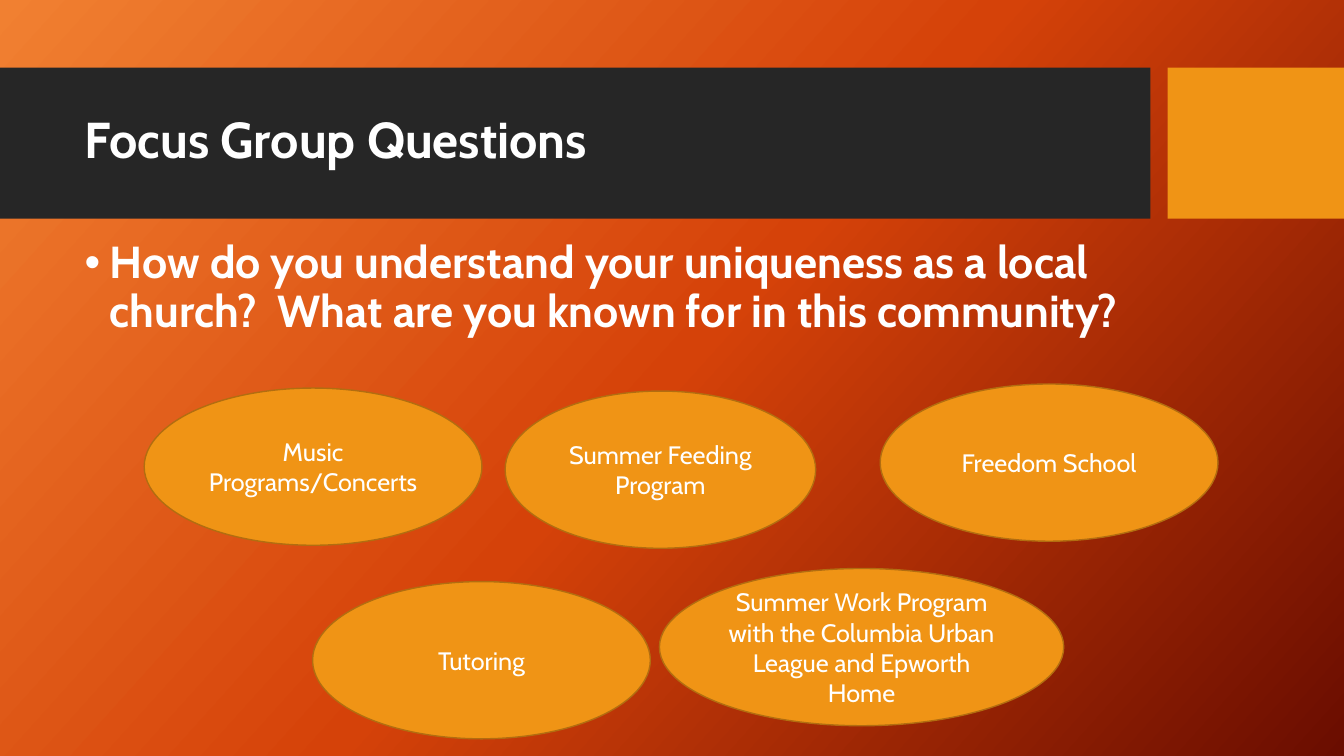
from copy import deepcopy
from dataclasses import dataclass

from lxml import etree
from pptx import Presentation
from pptx.dml.color import RGBColor
from pptx.enum import shapes, text
from pptx.oxml import ns
from pptx.util import Inches, Pt

# Content
TITLE = "Focus Group Questions"
QUESTION = ("How do you understand your uniqueness as a local church?  "
            "What are you known for in this community?")
# answer, left, top, width
ANSWERS = [
    ("Music Programs/Concerts", 1.43, 3.85, 3.35),
    ("Summer Feeding Program", 5.01, 3.88, 3.08),
    ("Freedom School", 8.73, 3.81, 3.35),
    ("Tutoring", 3.1, 5.77, 3.35),
    ("Summer Work Program with the Columbia Urban League and Epworth Home",
     6.54, 5.64, 4.01),
]
ANSWER_HEIGHT = 1.56


@dataclass(frozen=True)
class Theme:
    font: str = "Cabin"
    ink: str = "FFFFFF"
    band: str = "262626"
    accent: str = "F09415"
    outline: str = "B26D10"
    gradient: tuple = ((0, "F18031"), (0.5, "D54209"), (1, "6A0D00"))
    gradient_angle: int = 42
    title_size: int = 36
    question_size: int = 32
    answer_size: int = 18


THEME = Theme()
SLIDE_WIDTH, SLIDE_HEIGHT = 13.33, 7.5
BAND_TOP, BAND_HEIGHT, BAND_WIDTH = 0.67, 1.5, 11.41
ACCENT_LEFT = 11.58


def paint_background(page):
    fill = page.background.fill
    fill.gradient()
    fill.gradient_angle = 360 - THEME.gradient_angle
    stop_list = page.element.find(".//" + ns.qn("a:gsLst"))
    stop_list.insert(1, deepcopy(stop_list[0]))
    for stop, (position, color) in zip(fill.gradient_stops, THEME.gradient):
        stop.position = position
        stop.color.rgb = RGBColor.from_string(color)


def add_block(page, kind, left, top, width, height, fill, line=None):
    block = page.shapes.add_shape(
        kind, Inches(left), Inches(top), Inches(width), Inches(height))
    block.shadow.inherit = False
    block.fill.solid()
    block.fill.fore_color.rgb = RGBColor.from_string(fill)
    if line:
        block.line.color.rgb = RGBColor.from_string(line)
        block.line.width = Pt(1)
    else:
        block.line.fill.background()
    return block


def place(box, left, top, width, height):
    box.left, box.top = Inches(left), Inches(top)
    box.width, box.height = Inches(width), Inches(height)


def write(box, words, size, align, anchor, bold=False):
    frame = box.text_frame
    frame.word_wrap = True
    frame.auto_size = text.MSO_AUTO_SIZE.NONE
    frame.vertical_anchor = anchor
    para = frame.paragraphs[0]
    para.alignment = align
    para.space_before = Pt(0)
    span = para.add_run()
    span.text = words
    span.font.name = THEME.font
    span.font.size = Pt(size)
    span.font.bold = bold
    span.font.color.rgb = RGBColor.from_string(THEME.ink)
    return para


def add_bullet(para, indent):
    props = para._p.get_or_add_pPr()
    props.set("marL", str(Inches(indent)))
    props.set("indent", str(-Inches(indent)))
    etree.SubElement(props, ns.qn("a:buFont")).set("typeface", "Arial")
    etree.SubElement(props, ns.qn("a:buChar")).set("char", "•")


def main():
    deck = Presentation()
    deck.slide_width, deck.slide_height = Inches(SLIDE_WIDTH), Inches(SLIDE_HEIGHT)
    page = deck.slides.add_slide(deck.slide_layouts[1])
    title, question = page.shapes.title, page.placeholders[1]
    paint_background(page)

    # Title band and accent block, kept behind the placeholders
    rectangle = shapes.MSO_SHAPE.RECTANGLE
    band = add_block(page, rectangle, 0, BAND_TOP, BAND_WIDTH, BAND_HEIGHT, THEME.band)
    accent = add_block(page, rectangle, ACCENT_LEFT, BAND_TOP,
                       SLIDE_WIDTH - ACCENT_LEFT, BAND_HEIGHT, THEME.accent)
    for block in (band, accent):
        title.element.addprevious(block.element)

    # Title and question
    place(title, 0.74, 0.82, 10.51, 1.18)
    para = write(title, TITLE, THEME.title_size, text.PP_ALIGN.LEFT,
                 text.MSO_ANCHOR.MIDDLE, bold=True)
    para.line_spacing = 0.9
    place(question, 0.74, 2.33, 11.14, 5.17)
    para = write(question, QUESTION, THEME.question_size, text.PP_ALIGN.LEFT,
                 text.MSO_ANCHOR.TOP, bold=True)
    para.line_spacing = 0.9
    add_bullet(para, 0.25)

    # Answers
    for words, left, top, width in ANSWERS:
        oval = add_block(page, shapes.MSO_SHAPE.OVAL, left, top, width,
                         ANSWER_HEIGHT, THEME.accent, THEME.outline)
        write(oval, words, THEME.answer_size, text.PP_ALIGN.CENTER,
              text.MSO_ANCHOR.MIDDLE)

    deck.save("out.pptx")


if __name__ == "__main__":
    main()
